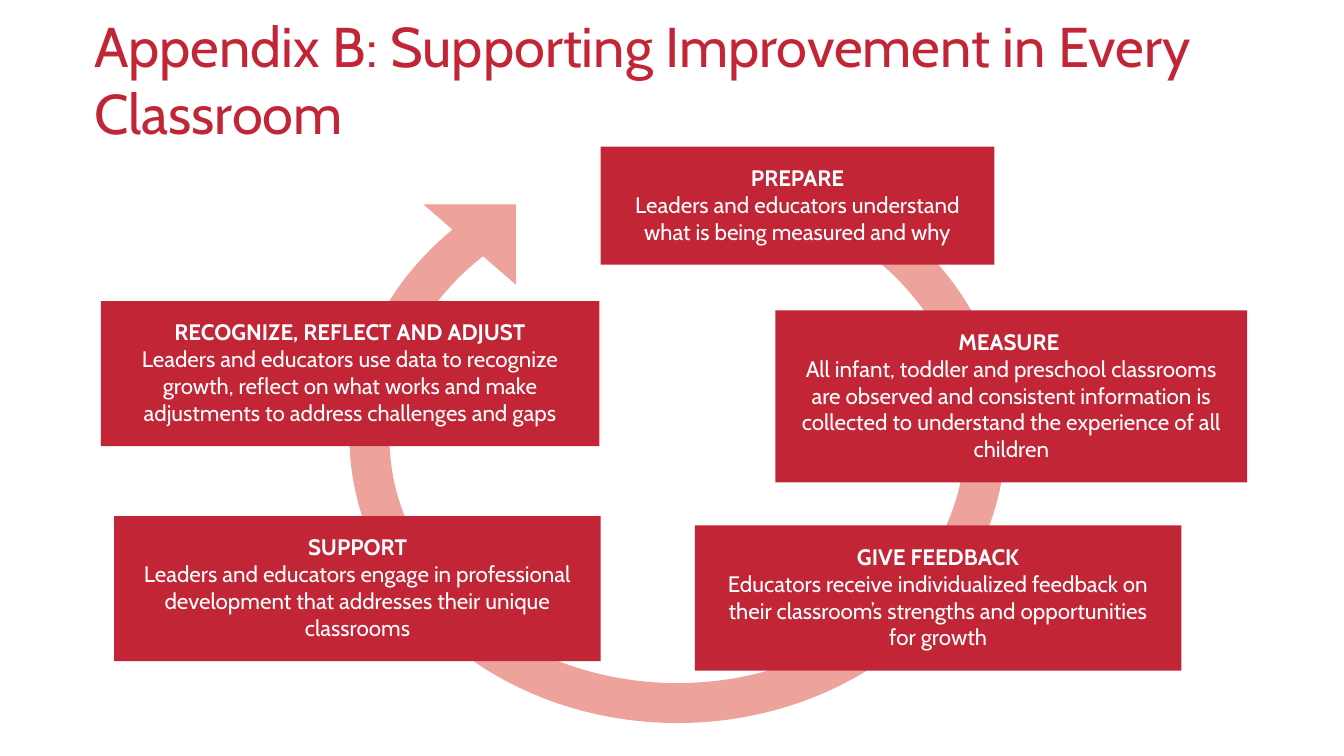
from dataclasses import dataclass

from pptx import Presentation
from pptx.dml.color import RGBColor as Rgb
from pptx.enum.shapes import MSO_SHAPE as Kind
from pptx.enum.text import MSO_ANCHOR as Anchor, MSO_AUTO_SIZE as Fit, PP_ALIGN as Align
from pptx.shapes.autoshape import Shape
from pptx.slide import Slide
from pptx.text.text import TextFrame, _Paragraph as Para
from pptx.util import Inches, Pt


@dataclass(frozen=True)
class Theme:
    font: str = "Cabin"
    red: Rgb = Rgb(0xC2, 0x25, 0x36)
    pink: Rgb = Rgb(0xED, 0xA2, 0x9B)
    white: Rgb = Rgb(0xFF, 0xFF, 0xFF)
    head: int = 30
    body: int = 12


@dataclass(frozen=True)
class Rect:
    left: float
    top: float
    width: float
    height: float


@dataclass(frozen=True)
class Step:
    name: str
    text: str
    rect: Rect


THEME = Theme()
TITLE = Rect(0.62, 0.04, 8.62, 1.09)
RING = Rect(2.6, 1.13, 4.88, 4.25)
TIP = Rect(3.15, 1.52, 0.69, 0.6)
STEPS = [
    Step("PREPARE",
         "Leaders and educators understand what is being measured and why",
         Rect(4.47, 1.09, 2.93, 0.88)),
    Step("SUPPORT",
         "Leaders and educators engage in professional development that "
         "addresses their unique classrooms",
         Rect(0.85, 3.84, 3.62, 1.08)),
    Step("GIVE FEEDBACK",
         "Educators receive individualized feedback on their classroom’s "
         "strengths and opportunities for growth",
         Rect(5.17, 3.91, 3.62, 1.08)),
    Step("RECOGNIZE, REFLECT AND ADJUST",
         "Leaders and educators use data to recognize growth, reflect on what "
         "works and make adjustments to address challenges and gaps",
         Rect(0.75, 2.24, 3.71, 1.08)),
    Step("MEASURE ",
         "All infant, toddler and preschool classrooms are observed and "
         "consistent information is collected to understand the experience "
         "of all children",
         Rect(5.77, 2.31, 3.51, 1.28)),
]


def set_frame(frame: TextFrame, side: float, edge: float, anchor: Anchor) -> None:
    frame.word_wrap = True
    frame.vertical_anchor = anchor
    frame.margin_left = frame.margin_right = Inches(side)
    frame.margin_top = frame.margin_bottom = Inches(edge)


def add_run(para: Para, text: str, size: int, color: Rgb, bold: bool = False) -> None:
    run = para.add_run()
    run.text = text
    run.font.name = THEME.font
    run.font.size = Pt(size)
    run.font.bold = bold
    run.font.color.rgb = color


def add_shape(slide: Slide, kind: Kind, rect: Rect, fill: Rgb) -> Shape:
    shape = slide.shapes.add_shape(
        kind, Inches(rect.left), Inches(rect.top),
        Inches(rect.width), Inches(rect.height))
    shape.shadow.inherit = False
    shape.fill.solid()
    shape.fill.fore_color.rgb = fill
    shape.line.fill.background()
    return shape


def draw_title(slide: Slide, text: str) -> None:
    title = slide.shapes.title
    title.left, title.top = Inches(TITLE.left), Inches(TITLE.top)
    title.width, title.height = Inches(TITLE.width), Inches(TITLE.height)
    frame = title.text_frame
    set_frame(frame, 0.08, 0.04, Anchor.MIDDLE)
    frame.auto_size = Fit.NONE
    para = frame.paragraphs[0]
    para.alignment = Align.LEFT
    add_run(para, text, THEME.head, THEME.red)


def draw_cycle(slide: Slide) -> None:
    ring = add_shape(slide, Kind.BLOCK_ARC, RING, THEME.pink)
    for index, value in enumerate((54, 30.13, 0.07)):
        ring.adjustments[index] = value
    tip = add_shape(slide, Kind.RIGHT_TRIANGLE, TIP, THEME.pink)
    for shape in (ring, tip):
        shape.rotation = 180


def draw_step(slide: Slide, step: Step) -> None:
    frame = add_shape(slide, Kind.RECTANGLE, step.rect, THEME.red).text_frame
    set_frame(frame, 0.14, 0.13, Anchor.TOP)
    frame.auto_size = Fit.SHAPE_TO_FIT_TEXT
    head, body = frame.paragraphs[0], frame.add_paragraph()
    for para, text, bold in ((head, step.name, True), (body, step.text, False)):
        para.alignment = Align.CENTER
        add_run(para, text, THEME.body, THEME.white, bold)


def main() -> None:
    deck = Presentation()
    deck.slide_width = Inches(10)
    deck.slide_height = deck.slide_width * 9 // 16
    slide = deck.slides.add_slide(deck.slide_layouts[5])
    draw_title(slide, "Appendix B: Supporting Improvement in Every Classroom")
    draw_cycle(slide)
    for step in STEPS:
        draw_step(slide, step)
    deck.save("out.pptx")


if __name__ == "__main__":
    main()
